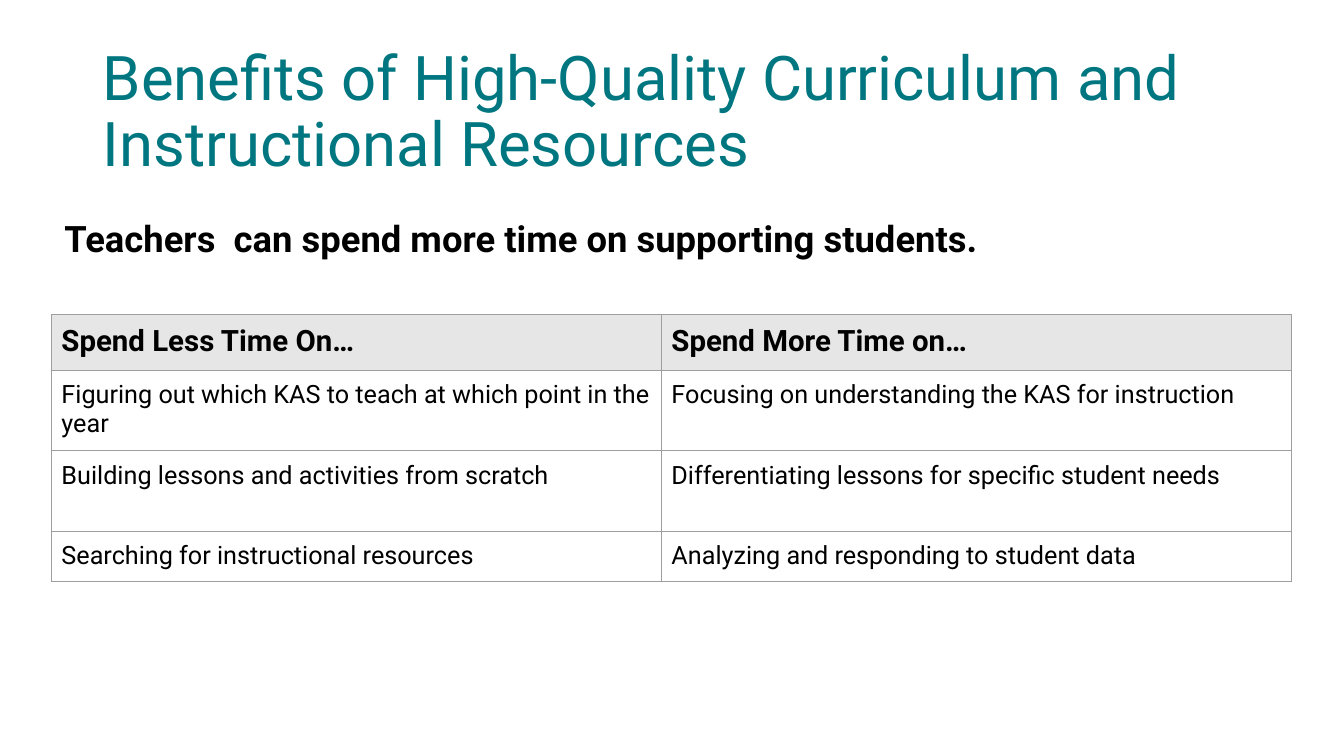
from lxml import etree
from pptx import Presentation
from pptx.dml.color import RGBColor
from pptx.enum.text import MSO_ANCHOR, MSO_AUTO_SIZE
from pptx.oxml.ns import qn
from pptx.util import Inches, Pt

TITLE = "Benefits of High-Quality Curriculum and Instructional Resources"
SUBTITLE = "Teachers  can spend more time on supporting students."
ROWS = [
    ("Spend Less Time On…", "Spend More Time on…"),
    ("Figuring out which KAS to teach at which point in the year",
     "Focusing on understanding the KAS for instruction"),
    ("Building lessons and activities from scratch",
     "Differentiating lessons for specific student needs"),
    ("Searching for instructional resources",
     "Analyzing and responding to student data"),
]
COL_WIDTHS = (6.05, 6.25)
ROW_HEIGHTS = (0.55, 0.8, 0.8, 0.5)

FONT = "Roboto"
TEAL = RGBColor(0x00, 0x77, 0x80)
BLACK = RGBColor(0x00, 0x00, 0x00)
HEADER_GRAY = RGBColor(0xE7, 0xE6, 0xE6)
BORDER_GRAY = RGBColor(0x9E, 0x9E, 0x9E)


def add_run(p, text, size, color=BLACK, bold=False):
    r = p.add_run()
    r.text = text
    r.font.name = FONT
    r.font.size = Pt(size)
    r.font.bold = bold
    r.font.color.rgb = color


def add_text(s, box, inset_y, text, size, color=BLACK, bold=False):
    tf = s.shapes.add_textbox(*map(Inches, box)).text_frame
    tf.word_wrap = True
    tf.margin_left = tf.margin_right = Inches(0.1)
    tf.margin_top = tf.margin_bottom = Inches(inset_y)
    add_run(tf.paragraphs[0], text, size, color, bold)
    return tf


def add_borders(cell):
    """Draw all four cell edges; call before the fill, which must follow them."""
    tcPr = cell._tc.get_or_add_tcPr()
    for side in ("a:lnL", "a:lnR", "a:lnT", "a:lnB"):
        ln = etree.SubElement(tcPr, qn(side), w=str(Pt(0.75)))
        fill = etree.SubElement(ln, qn("a:solidFill"))
        etree.SubElement(fill, qn("a:srgbClr"), val=str(BORDER_GRAY))


def add_time_table(s, left, top):
    frame = s.shapes.add_table(
        len(ROWS), len(COL_WIDTHS), Inches(left), Inches(top),
        Inches(sum(COL_WIDTHS)), Inches(sum(ROW_HEIGHTS)))
    table = frame.table
    table.horz_banding = False
    for column, width in zip(table.columns, COL_WIDTHS):
        column.width = Inches(width)
    for i, (row, height) in enumerate(zip(table.rows, ROW_HEIGHTS)):
        row.height = Inches(height)
        header = i == 0
        for cell, text in zip(row.cells, ROWS[i]):
            cell.margin_left = cell.margin_right = Inches(0.1)
            cell.margin_top = cell.margin_bottom = Inches(0.1)
            add_borders(cell)
            if header:
                cell.fill.solid()
                cell.fill.fore_color.rgb = HEADER_GRAY
            else:
                cell.fill.background()
            add_run(cell.text_frame.paragraphs[0], text,
                    21 if header else 18, bold=header)


def main():
    prs = Presentation()
    prs.slide_width, prs.slide_height = Inches(13.33), Inches(7.5)
    s = prs.slides.add_slide(prs.slide_layouts[6])

    title = add_text(s, (0.92, 0.4, 11.5, 1.45), 0.05, TITLE, 44, TEAL)
    title.vertical_anchor = MSO_ANCHOR.MIDDLE
    title.paragraphs[0].line_spacing = 0.9

    add_time_table(s, 0.51, 3.12)

    subtitle = add_text(s, (0.54, 2.04, 12.3, 0.64), 0.1, SUBTITLE, 26, bold=True)
    subtitle.auto_size = MSO_AUTO_SIZE.SHAPE_TO_FIT_TEXT

    prs.save("out.pptx")


if __name__ == "__main__":
    main()
